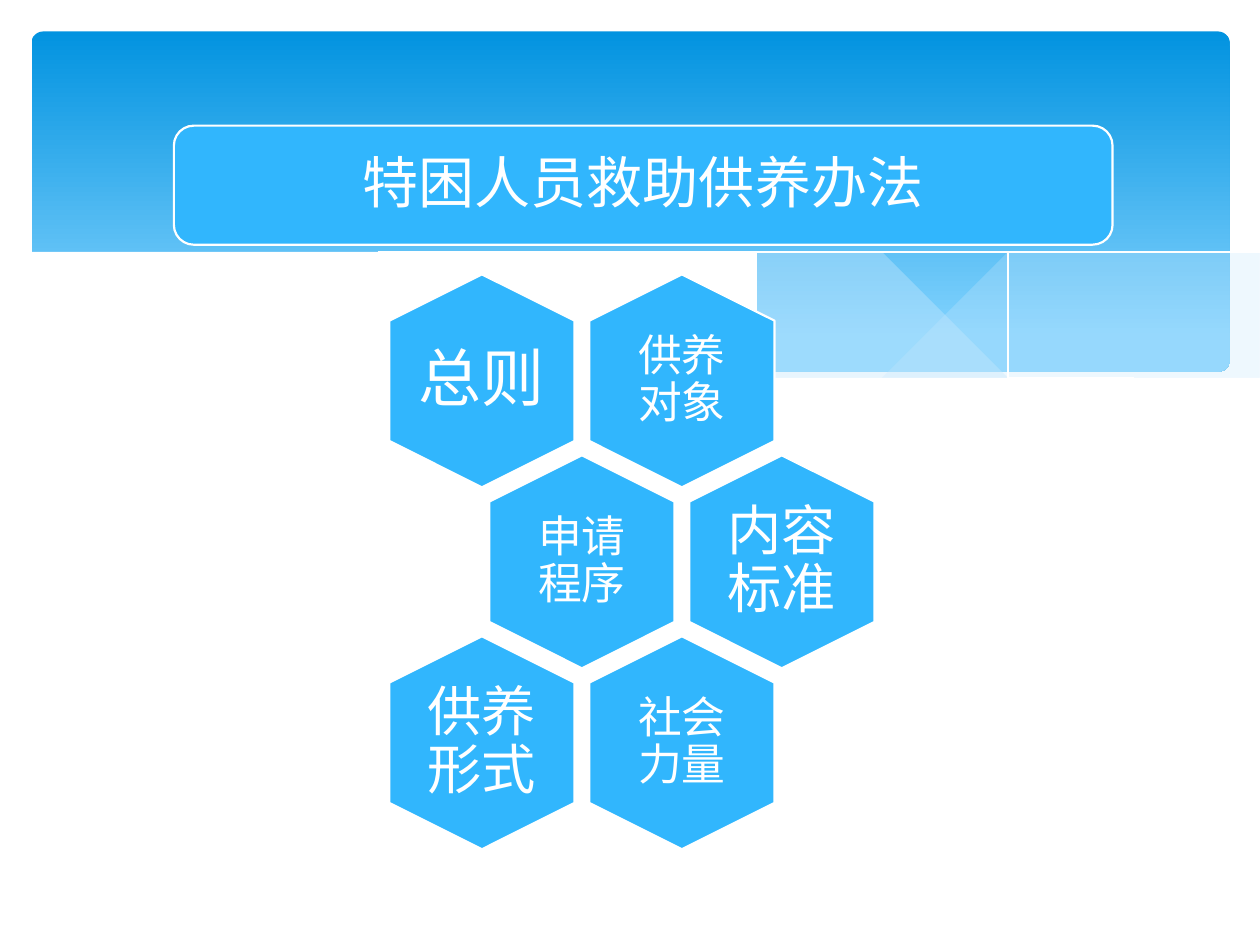
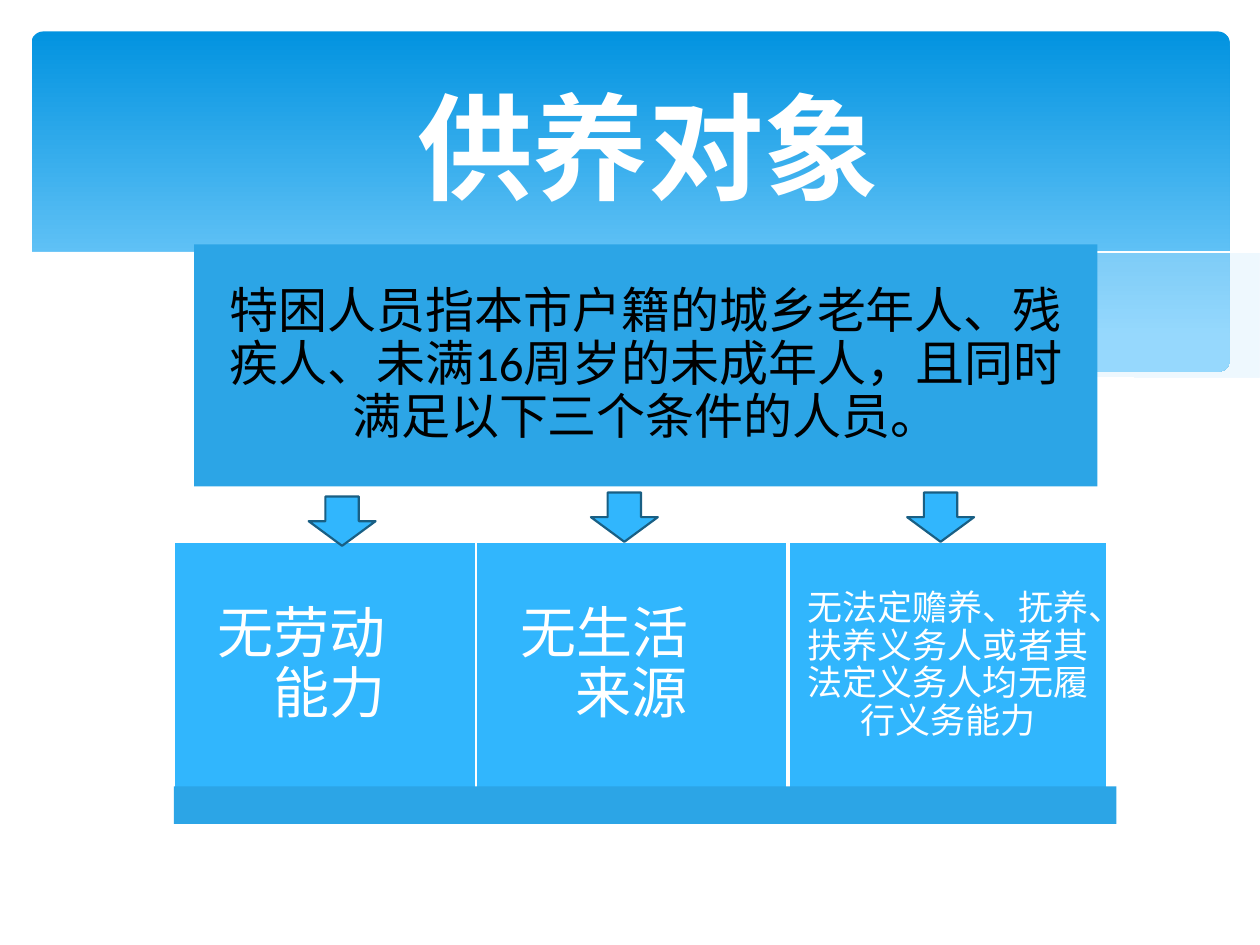
from dataclasses import dataclass

from lxml import etree
from pptx import Presentation
from pptx import util as u
from pptx.dml.color import RGBColor
from pptx.enum import shapes, text
from pptx.oxml import ns

FONT = "Calibri"
WHITE, BLACK = "FFFFFF", "000000"
SKY, BAR_BLUE, MIST, ARROW_EDGE = "31B6FD", "2CA5E6", "C6E7FC", "195F84"
BAND_TOP, BAND_BOTTOM = "0293E0", "83D3FE"
LINE_WIDTH = 1.25


@dataclass
class Box:
    """A rectangle in inches."""
    left: float
    top: float
    width: float
    height: float

    def inner(self, left, top, width, height):
        """Return an inner box given in percent of this one."""
        return Box(self.left + self.width * left / 100,
                   self.top + self.height * top / 100,
                   self.width * width / 100, self.height * height / 100)

    def lengths(self):
        return [u.Inches(v) for v in (self.left, self.top, self.width, self.height)]


SLIDE = Box(0, 0, 10, 7.5)

# Knots of the wave curves, in inches
RIDGE = [(9.77, 2.46), (9.3, 2.62), (8.75, 2.73), (8.09, 2.77), (7.44, 2.74),
         (6.48, 2.62), (5.55, 2.45), (4.47, 2.2), (3.65, 2.02), (2.92, 1.9),
         (2.3, 1.85), (1.77, 1.84), (1.19, 1.87), (0.67, 1.97), (0.23, 2.13)]
RIGHT_CREST = [(9.76, 2), (9.35, 2.07), (8.61, 2.23), (7.79, 2.42),
               (7.06, 2.57), (6.61, 2.65)]
RIGHT_TROUGH = [(6.61, 2.65), (7.19, 2.72), (7.69, 2.77), (8.24, 2.77),
                (8.72, 2.74), (9.21, 2.65), (9.76, 2.47)]
LONG_CREST = [(8.93, 2.73), (8.37, 2.65), (7.41, 2.47), (6.29, 2.22), (5.55, 2.05),
              (4.89, 1.94), (4.2, 1.87), (3.61, 1.85), (2.86, 1.91)]
LONG_TROUGH = [(2.86, 1.91), (3.62, 2.03), (4.49, 2.22), (5.66, 2.48), (6.5, 2.64),
               (7.22, 2.74), (7.85, 2.78), (8.38, 2.78), (8.93, 2.73)]
FALLING_LINE = [(3.09, 1.95), (3.53, 1.89), (4.16, 1.87), (4.89, 1.9), (5.82, 2),
                (6.95, 2.19), (7.95, 2.41), (9.07, 2.72)]
RISING_LINE = [(6.13, 2.57), (6.95, 2.35), (8.06, 2.1), (8.95, 1.94), (9.75, 1.85)]


def color(value):
    return RGBColor.from_string(value)


def paint(shape, fill=None, line=None, width=LINE_WIDTH, alpha=None):
    shape.shadow.inherit = False
    if fill:
        shape.fill.solid()
        shape.fill.fore_color.rgb = color(fill)
    else:
        shape.fill.background()
    if alpha is not None:
        fill_color = shape.element.spPr.find(".//" + ns.qn("a:srgbClr"))
        etree.SubElement(fill_color, ns.qn("a:alpha"), val=str(alpha * 1000))
    if line:
        shape.line.color.rgb = color(line)
        shape.line.width = u.Pt(width)
    else:
        shape.line.fill.background()


def add_shape(slide, kind, box, fill, line=None):
    shape = slide.shapes.add_shape(kind, *box.lengths())
    paint(shape, fill, line)
    return shape


def write(shape, words, size, font_color=WHITE, inset=0.13, bold=False, tight=True):
    """Write one centred paragraph; tight sets the diagram line spacing."""
    frame = shape.text_frame
    frame.text = words
    frame.word_wrap = True
    frame.vertical_anchor = text.MSO_ANCHOR.MIDDLE
    frame.margin_left = frame.margin_right = u.Inches(inset)
    frame.margin_top = frame.margin_bottom = u.Inches(inset)
    paragraph = frame.paragraphs[0]
    paragraph.alignment = text.PP_ALIGN.CENTER
    if tight:
        paragraph.line_spacing = 0.9
        after = etree.SubElement(paragraph._p.pPr, ns.qn("a:spcAft"))
        etree.SubElement(after, ns.qn("a:spcPct"), val="35000")
    for run in paragraph.runs:
        run.font.name = FONT
        run.font.size = u.Pt(size)
        run.font.bold = bold
        run.font.color.rgb = color(font_color)
    return paragraph


def step_second_line(paragraph, first, rest):
    """Left-align, with later lines starting further in than the first."""
    paragraph.alignment = text.PP_ALIGN.LEFT
    properties = paragraph._p.pPr
    properties.set("marL", str(u.Inches(rest)))
    properties.set("indent", str(u.Inches(first - rest)))


def smooth(knots, steps=6):
    """Join the knots by a Catmull-Rom curve."""
    ends = [knots[0], *knots, knots[-1]]
    points = [knots[0]]
    for a, b, c, d in zip(ends, ends[1:], ends[2:], ends[3:]):
        for step in range(1, steps + 1):
            t = step / steps
            points.append(tuple(
                (2 * q + (r - p) * t + (2 * p - 5 * q + 4 * r - s) * t ** 2
                 + (3 * q - p - 3 * r + s) * t ** 3) / 2
                for p, q, r, s in zip(a, b, c, d)))
    return points


def add_outline(slide, points, close=True, **look):
    builder = slide.shapes.build_freeform(*points[0], scale=u.Inches(1))
    builder.add_line_segments(points[1:], close=close)
    paint(builder.convert_to_shape(), **look)


def add_wave_band(slide):
    """Blue gradient band with waves, shared by every slide."""
    band = add_shape(slide, shapes.MSO_SHAPE.ROUNDED_RECTANGLE,
                     Box(0.25, 0.25, 9.51, 2.7), BAND_TOP)
    band.adjustments[0] = 0.034
    band.fill.gradient()
    band.fill.gradient_angle = 270
    for stop, position, value in zip(band.fill.gradient_stops, (0, 0.9),
                                     (BAND_TOP, BAND_BOTTOM)):
        stop.position = position
        stop.color.rgb = color(value)
    # Translucent swells, thin lines, then the white lower edge
    add_outline(slide, smooth(RIGHT_CREST) + smooth(RIGHT_TROUGH), fill=MIST, alpha=29)
    add_outline(slide, smooth(LONG_CREST) + smooth(LONG_TROUGH), fill=MIST, alpha=40)
    for knots in (FALLING_LINE, RISING_LINE):
        add_outline(slide, smooth(knots), close=False, line=WHITE, width=0)
    add_outline(slide, smooth(RIDGE) + [(0.23, 3.29), (9.77, 3.29)], fill=WHITE)


def add_banner(slide, box, words):
    banner = add_shape(slide, shapes.MSO_SHAPE.ROUNDED_RECTANGLE, box, SKY, WHITE)
    write(banner, words, 32)


def add_honeycomb(slide, box, cells):
    """Cells are (half column, row, words, size, inset)."""
    width, height = 1.69, 1.47
    half_column = (box.width - width) / 3
    row_step = (box.height - height) / 2
    for column, row, words, size, inset in cells:
        cell = Box(box.left + column * half_column, box.top + row * row_step,
                   width, height)
        hexagon = add_shape(slide, shapes.MSO_SHAPE.HEXAGON, cell, SKY, WHITE)
        hexagon.adjustments[0] = 0.25
        hexagon.rotation = 90
        label = slide.shapes.add_textbox(*cell.inner(20, 10, 60, 80).lengths())
        write(label, words, size, inset=inset)


def add_title(slide, box, words):
    title = slide.shapes.add_textbox(*box.lengths())
    write(title, words, 66, inset=0.05, bold=True, tight=False)


def add_conditions(slide, box, definition, conditions):
    """Definition panel above three condition columns and a base bar."""
    rectangle = shapes.MSO_SHAPE.RECTANGLE
    panel = add_shape(slide, rectangle, box.inner(2.14, 0, 95.86, 41.74), BAR_BLUE)
    write(panel, definition, 28, BLACK, inset=0.12)
    columns = [(0, 33), (32.1, 33), (65.24, 33.8)]
    for (left, width), (words, size, inset, stepped) in zip(columns, conditions):
        column = add_shape(slide, rectangle, box.inner(left, 51.3, width, 42.7),
                           SKY, WHITE)
        paragraph = write(column, words, size, inset=inset)
        if stepped:
            step_second_line(paragraph, 0.22, 0.66)
    add_shape(slide, rectangle, box.inner(0, 93.5, 100, 6.5), BAR_BLUE)
    # Arrows from the panel to the columns
    for left, top in ((14.3, 43.5), (44.25, 42.8), (77.8, 42.8)):
        add_shape(slide, shapes.MSO_SHAPE.DOWN_ARROW, box.inner(left, top, 7.1, 8.5),
                  SKY, ARROW_EDGE)


def new_slide(presentation):
    slide = presentation.slides.add_slide(presentation.slide_layouts[6])
    add_wave_band(slide)
    return slide


def build_overview(presentation):
    slide = new_slide(presentation)
    add_banner(slide, SLIDE.inner(13.8, 13.3, 74.5, 12.6), "特困人员救助供养办法")
    add_honeycomb(slide, SLIDE.inner(29.8, 30.5, 40.7, 57.9), [
        (2, 0, "供养对象", 25, 0.1),
        (0, 0, "总则", 36, 0),
        (1, 1, "申请程序", 25, 0.1),
        (3, 1, "内容标准", 31, 0),
        (2, 2, "社会力量", 25, 0.1),
        (0, 2, "供养形式", 31, 0),
    ])


def build_eligibility(presentation):
    slide = new_slide(presentation)
    add_title(slide, SLIDE.inner(14.6, 8, 73.7, 14.7), "供养对象")
    add_conditions(
        slide, SLIDE.inner(13.8, 25.87, 74.8, 61.33),
        "特困人员指本市户籍的城乡老年人、残疾人、未满16周岁的未成年人，"
        "且同时满足以下三个条件的人员。",
        [("无劳动\v能力", 32, 0.13, True),
         ("无生活\v来源", 32, 0.13, True),
         ("无法定赡养、抚养、扶养义务人或者其法定义务人均无履行义务能力",
          20, 0.08, False)])


def main():
    presentation = Presentation()
    presentation.slide_width = u.Inches(SLIDE.width)
    presentation.slide_height = u.Inches(SLIDE.height)
    build_overview(presentation)
    build_eligibility(presentation)
    presentation.save("out.pptx")


if __name__ == "__main__":
    main()
